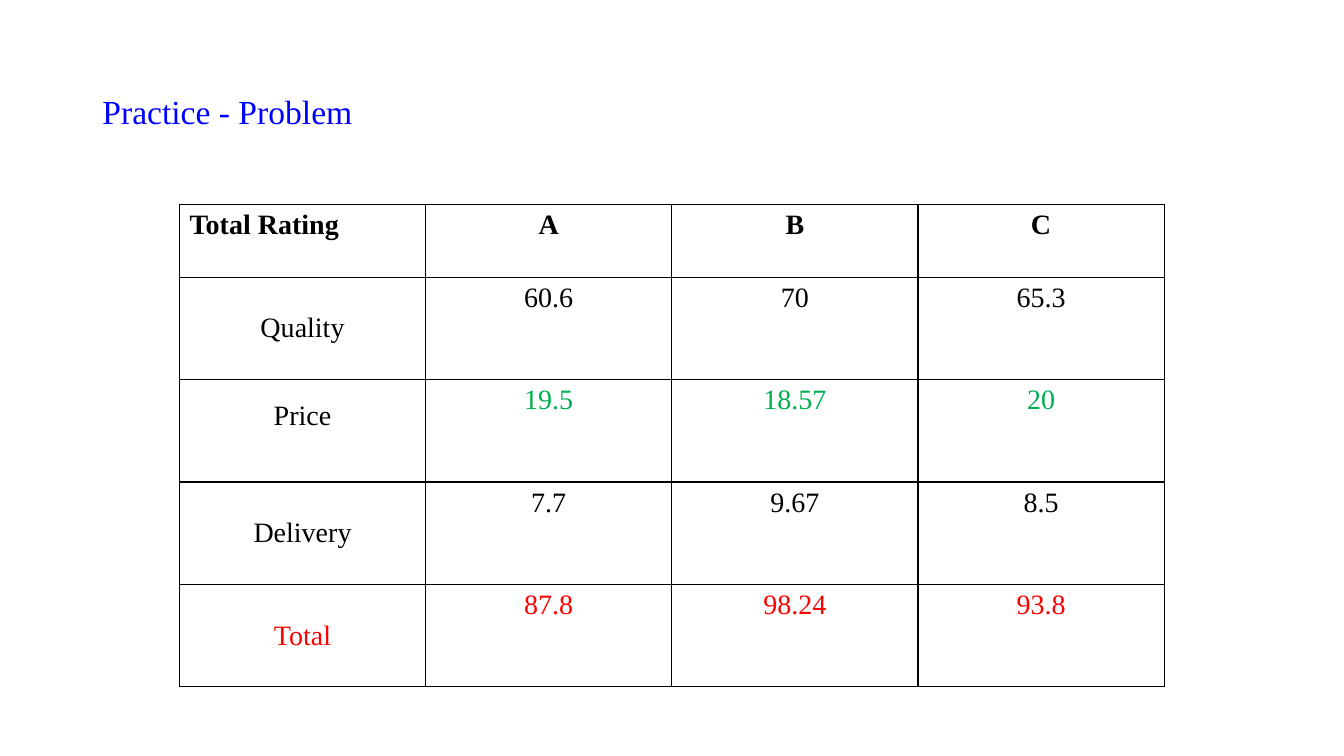
from lxml import etree
from pptx import Presentation
from pptx.dml.color import RGBColor
from pptx.enum.text import MSO_ANCHOR, PP_ALIGN
from pptx.oxml.ns import qn
from pptx.util import Pt

LEFT, CENTER = PP_ALIGN.LEFT, PP_ALIGN.CENTER
TOP, MIDDLE = MSO_ANCHOR.TOP, MSO_ANCHOR.MIDDLE

FONT = "Times New Roman"
BLUE = RGBColor(0x00, 0x00, 0xFF)
BLACK = RGBColor(0x00, 0x00, 0x00)
WHITE = RGBColor(0xFF, 0xFF, 0xFF)
GREEN = RGBColor(0x00, 0xB0, 0x50)
RED = RGBColor(0xFF, 0x00, 0x00)

HEADER_HEIGHT = 52
PRICE_LIFT = 21  # extra bottom margin that raises the "Price" label

# Each row: texts, colour of the label, colour of the figures
RATINGS = [
    (("Total Rating", "A", "B", "C"), BLACK, BLACK),
    (("Quality", "60.6", "70", "65.3"), BLACK, BLACK),
    (("Price", "19.5", "18.57", "20"), BLACK, GREEN),
    (("Delivery", "7.7", "9.67", "8.5"), BLACK, BLACK),
    (("Total", "87.8", "98.24", "93.8"), RED, RED),
]


def add_run(paragraph, text, size, color, bold=False):
    run = paragraph.add_run()
    run.text = text
    run.font.name = FONT
    run.font.size = Pt(size)
    run.font.bold = bold
    run.font.color.rgb = color


def set_borders(cell):
    properties = cell._tc.get_or_add_tcPr()
    for side in ("a:lnL", "a:lnR", "a:lnT", "a:lnB"):
        line = etree.SubElement(properties, qn(side), w=str(Pt(1)))
        line_fill = etree.SubElement(line, qn("a:solidFill"))
        etree.SubElement(line_fill, qn("a:srgbClr"), val=str(BLACK))


def place_title(slide, left, top, width, height):
    title = slide.shapes.title
    title.left, title.top = Pt(left), Pt(top)
    title.width, title.height = Pt(width), Pt(height)
    title.text_frame.vertical_anchor = MIDDLE
    heading = title.text_frame.paragraphs[0]
    heading.alignment = LEFT
    heading.line_spacing = 0.9
    add_run(heading, "Practice - Problem", 24, BLUE)


def add_rating_table(slide, left, top, width, height):
    column_count = len(RATINGS[0][0])
    ratings = slide.shapes.add_table(
        len(RATINGS), column_count, Pt(left), Pt(top), Pt(width), Pt(height)
    ).table
    ratings.first_row = ratings.horz_banding = False
    for column in ratings.columns:
        column.width = Pt(width / column_count)

    body_height = (height - HEADER_HEIGHT) / (len(RATINGS) - 1)
    for row, (texts, label_color, figure_color) in enumerate(RATINGS):
        is_header = row == 0
        ratings.rows[row].height = Pt(HEADER_HEIGHT if is_header else body_height)
        for col, text in enumerate(texts):
            is_label = col == 0
            cell = ratings.cell(row, col)
            set_borders(cell)
            cell.fill.solid()
            cell.fill.fore_color.rgb = WHITE
            cell.vertical_anchor = MIDDLE if is_label and not is_header else TOP
            if text == "Price":
                cell.margin_bottom = Pt(3.6 + PRICE_LIFT)
            paragraph = cell.text_frame.paragraphs[0]
            paragraph.alignment = LEFT if is_label and is_header else CENTER
            add_run(paragraph, text, 20,
                    label_color if is_label else figure_color, is_header)


def main():
    deck = Presentation()
    deck.slide_width, deck.slide_height = Pt(960), Pt(540)
    slide = deck.slides.add_slide(deck.slide_layouts[5])
    place_title(slide, 66, 28.75, 828, 104.4)
    add_rating_table(slide, 128.2, 146, 703.4, 344.6)
    deck.save("out.pptx")


if __name__ == "__main__":
    main()
